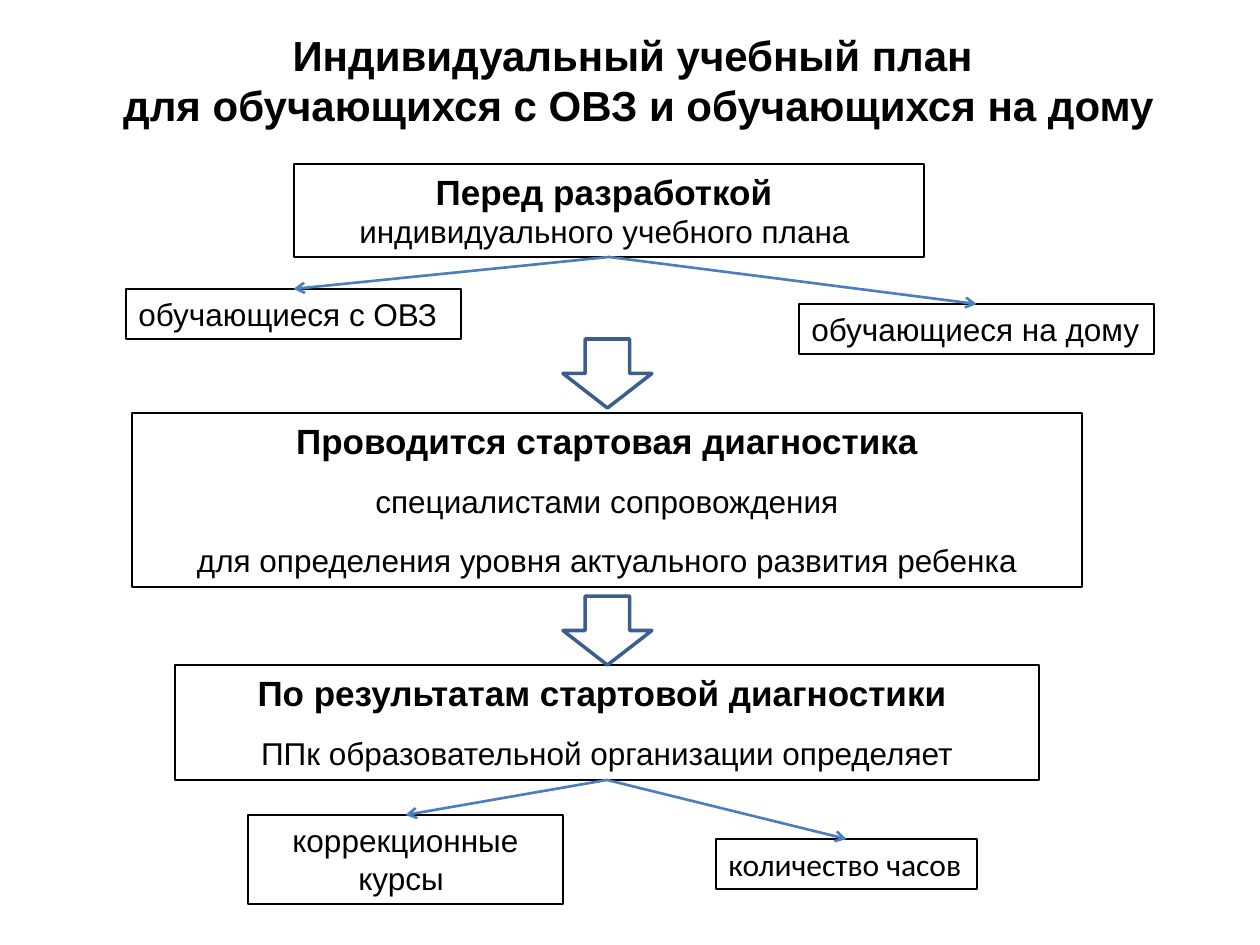
from lxml import etree
from pptx import Presentation
from pptx import util as u
from pptx.dml.color import RGBColor
from pptx.enum import shapes, text
from pptx.oxml import ns

PX_PER_INCH = 126
BLACK = RGBColor(0x00, 0x00, 0x00)
LINK_BLUE = RGBColor(0x4B, 0x7E, 0xBC)
ARROW_BLUE = RGBColor(0x3A, 0x5F, 0x8C)
TOP, BOTTOM = 0, 2  # connection sites of a rectangle


def px(length):
    return u.Emu(round(length * 914400 / PX_PER_INCH))


def place(shape, left, top, width, height):
    shape.left, shape.top = px(left), px(top)
    shape.width, shape.height = px(width), px(height)


def write(frame, lines, align, gap=0, font="Arial"):
    """Fill a frame with (wording, size, bold) lines, one paragraph each."""
    frame.word_wrap = True
    frame.auto_size = text.MSO_AUTO_SIZE.SHAPE_TO_FIT_TEXT
    frame.vertical_anchor = text.MSO_ANCHOR.TOP
    frame.text = "\n".join(wording for wording, _, _ in lines)
    for para, (_, size, bold) in zip(frame.paragraphs, lines):
        para.alignment = align
        para.space_before = para.space_after = u.Pt(gap)
        for span in para.runs:
            span.font.name = font
            span.font.size = u.Pt(size)
            span.font.bold = bold
            span.font.color.rgb = BLACK


def add_title(page, lines):
    title = page.shapes.title
    place(title, 73, 23, 1131, 115)
    write(title.text_frame, [(line, 24, True) for line in lines],
          text.PP_ALIGN.CENTER)


def add_box(page, bounds, lines, align=text.PP_ALIGN.CENTER, **style):
    box = page.shapes.add_textbox(*map(px, bounds))
    box.line.color.rgb = BLACK
    box.line.width = u.Pt(0.75)
    write(box.text_frame, lines, align, **style)
    return box


def add_link(page, source, target):
    """Draw an arrow from the bottom of one box to the top of another."""
    link = page.shapes.add_connector(shapes.MSO_CONNECTOR.STRAIGHT, 0, 0, 0, 0)
    link.begin_connect(source, BOTTOM)
    link.end_connect(target, TOP)
    link.line.color.rgb = LINK_BLUE
    link.line.width = u.Pt(1.5)
    head = etree.SubElement(link.line._get_or_add_ln(), ns.qn("a:tailEnd"))
    head.set("type", "arrow")
    etree.SubElement(link._element.spPr, ns.qn("a:effectLst"))


def add_down_arrow(page, top):
    arrow = page.shapes.add_shape(shapes.MSO_SHAPE.DOWN_ARROW,
                                  px(563), px(top), px(89), px(69))
    arrow.shadow.inherit = False
    arrow.fill.background()
    arrow.line.color.rgb = ARROW_BLUE
    arrow.line.width = u.Pt(2)


def main():
    deck = Presentation()
    deck.slide_width, deck.slide_height = u.Inches(10), u.Inches(7.5)
    page = deck.slides.add_slide(deck.slide_layouts.get_by_name("Title Only"))
    left = text.PP_ALIGN.LEFT

    add_title(page, ["Индивидуальный учебный план ",
                     "для обучающихся с ОВЗ и обучающихся на дому"])

    # Main steps
    planning = add_box(page, (294, 164, 630, 93), [
        ("Перед разработкой ", 20, True),
        ("индивидуального учебного плана ", 18, False)])
    add_box(page, (132, 413, 950, 174), [
        ("Проводится стартовая диагностика", 20, True),
        (" специалистами сопровождения ", 18, False),
        ("для определения уровня актуального развития ребенка", 18, False)],
        gap=6)
    results = add_box(page, (175, 665, 864, 115), [
        ("По результатам стартовой диагностики ", 20, True),
        ("ППк образовательной организации определяет", 18, False)], gap=6)

    # Branches
    special_needs = add_box(page, (126, 289, 335, 50),
                            [("обучающиеся с ОВЗ", 18, False)], left)
    at_home = add_box(page, (799, 304, 355, 50),
                      [("обучающиеся на дому", 18, False)], left)
    courses = add_box(page, (248, 815, 315, 89),
                      [("коррекционные курсы ", 18, False)])
    hours = add_box(page, (716, 839, 261, 50),
                    [("количество часов", 18, False)], left, font="Calibri")

    # Links and arrows between the steps
    for source, targets in ((planning, (special_needs, at_home)),
                            (results, (courses, hours))):
        for target in targets:
            add_link(page, source, target)
    for top in (339, 596):
        add_down_arrow(page, top)

    deck.save("out.pptx")


if __name__ == "__main__":
    main()
